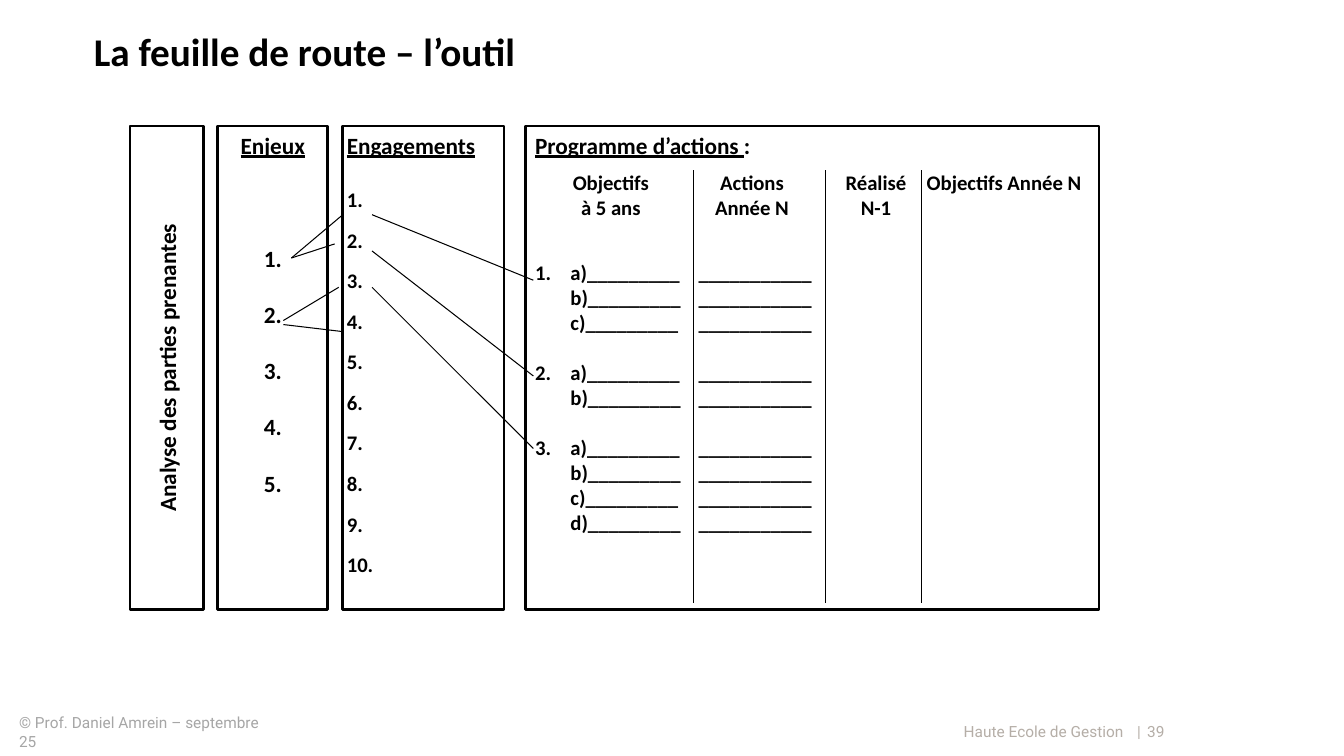
"""Build the roadmap slide: stakeholders, issues, commitments and action programme."""
import pptx
import pptx.util
import pptx.oxml.ns
from lxml import etree
from pptx.dml.color import RGBColor
from pptx.enum.shapes import MSO_CONNECTOR, MSO_SHAPE
from pptx.enum.text import MSO_ANCHOR, MSO_AUTO_SIZE, PP_ALIGN
from pptx.util import Inches

COLORS = {"ink": "000000", "credit": "A6A6A6", "school": "B5AEA7"}
LARGE, SMALL = 16.6, 14.8
TOP, HEIGHT = 1.25, 4.8


def write(frame, text, size=LARGE, font="Calibri", color="ink", bold=True, underline=False,
          align=PP_ALIGN.LEFT, before=0, tabs=()):
    """Add a paragraph to the frame, filling its first one when still empty."""
    para = frame.paragraphs[0]
    if para.runs:
        para = frame.add_paragraph()
    para.alignment = align
    para.space_before = pptx.util.Pt(before)
    if tabs:
        stops = etree.SubElement(para._p.get_or_add_pPr(), pptx.oxml.ns.qn("a:tabLst"))
        for position, kind in tabs:
            etree.SubElement(stops, pptx.oxml.ns.qn("a:tab"), pos=str(Inches(position)), algn=kind)
    span = para.add_run()
    span.text = text
    span.font.size = pptx.util.Pt(size)
    span.font.name = font
    span.font.bold = bold
    span.font.underline = underline
    span.font.color.rgb = RGBColor.from_string(COLORS[color])
    return para


deck = pptx.Presentation()
deck.slide_width, deck.slide_height = Inches(13.33), Inches(7.5)
page = deck.slides.add_slide(deck.slide_layouts[5])

title = page.shapes.title
title.left, title.top, title.width, title.height = map(Inches, (0.83, 0.22, 10.6, 0.73))
title.text_frame.vertical_anchor = MSO_ANCHOR.TOP
title.text_frame.auto_size = MSO_AUTO_SIZE.NONE
write(title.text_frame, "La feuille de route – l’outil", size=28)

frames = []
for left, width in ((1.29, 0.73), (2.16, 1.09), (3.4, 1.6), (5.21, 5.69)):
    box = page.shapes.add_shape(MSO_SHAPE.RECTANGLE, Inches(left), Inches(TOP),
                                Inches(width), Inches(HEIGHT))
    box.shadow.inherit = False
    box.fill.background()
    box.line.color.rgb = RGBColor.from_string(COLORS["ink"])
    box.line.width = pptx.util.Pt(2)
    box.text_frame.word_wrap = True
    box.text_frame.vertical_anchor = MSO_ANCHOR.TOP
    frames.append(box.text_frame)
stakeholders, issues, commitments, programme = frames

stakeholders._txBody.bodyPr.set("vert", "vert270")
stakeholders.vertical_anchor = MSO_ANCHOR.MIDDLE
write(stakeholders, "Analyse des parties prenantes", align=PP_ALIGN.CENTER)

write(issues, "Enjeux", underline=True, align=PP_ALIGN.CENTER)
for number in range(1, 6):
    write(issues, f"{number}.", align=PP_ALIGN.CENTER, before=60.75 if number == 1 else 20.25)

commitments.margin_left = commitments.margin_right = Inches(0.04)
write(commitments, "Engagements", underline=True)
for number in range(1, 11):
    write(commitments, f"{number}.", size=SMALL, before=20.25 if number == 1 else 11.2)

programme.margin_top = Inches(1.33)
for number, letters in enumerate(("abc", "ab", "abcd"), start=1):
    for letter in letters:
        first = letter == "a"
        label = f"{number}." if first else ""
        write(programme, f"{label}\t{letter})_________\t___________", size=SMALL,
              before=18.05 if first and number > 1 else 0, tabs=((0.35, "l"), (1.62, "l")))

header = page.shapes.add_textbox(Inches(5.21), Inches(TOP), Inches(5.96), Inches(0.99)).text_frame
header.word_wrap = True
heading = write(header, "Programme d’actions ", underline=True)
colon = heading.add_run()
colon.text = ":"
colon.font.size = pptx.util.Pt(LARGE)
colon.font.name = "Calibri"
colon.font.bold = True
colon.font.color.rgb = RGBColor.from_string(COLORS["ink"])
columns = ((0.75, "ctr"), (2.15, "ctr"), (3.38, "ctr"), (4.65, "ctr"))
write(header, "\tObjectifs\tActions\tRéalisé\tObjectifs Année N", size=SMALL, before=7.9, tabs=columns)
write(header, "\tà 5 ans\tAnnée N\tN-1", size=SMALL, tabs=columns)

separators = [(x, 1.69, x, 5.98) for x in (6.88, 8.19, 9.14)]
issue_links = [(2.89, 2.56, 3.4, 2.13), (2.89, 2.56, 3.32, 2.42),
               (2.81, 3.18, 3.36, 2.85), (2.81, 3.22, 3.4, 3.29)]
action_links = [(3.69, 2.13, 5.29, 2.78), (3.69, 2.49, 5.29, 3.73), (3.69, 2.85, 5.29, 4.45)]
for ends in action_links + separators + issue_links:
    link = page.shapes.add_connector(MSO_CONNECTOR.STRAIGHT, *map(Inches, ends))
    link.line.color.rgb = RGBColor.from_string(COLORS["ink"])
    link.line.width = pptx.util.Pt(0.75)
    etree.SubElement(link.element.spPr, pptx.oxml.ns.qn("a:effectLst"))

footers = (
    ("© Prof. Daniel Amrein – septembre 25", (0.09, 7.06, 2.78, 0.4), "credit", ()),
    ("Haute Ecole de Gestion\t|\t39", (9.46, 7.2, 2.2, 0.2), "school", ((1.72, "l"), (1.82, "l"))),
)
for text, place, color, tabs in footers:
    footer = page.shapes.add_textbox(*map(Inches, place)).text_frame
    footer.word_wrap = False
    footer.vertical_anchor = MSO_ANCHOR.MIDDLE
    line = write(footer, text, size=11, font="Roboto", color=color, bold=False, tabs=tabs)
    if color == "school":
        line.line_spacing = pptx.util.Pt(7)

deck.save("out.pptx")
